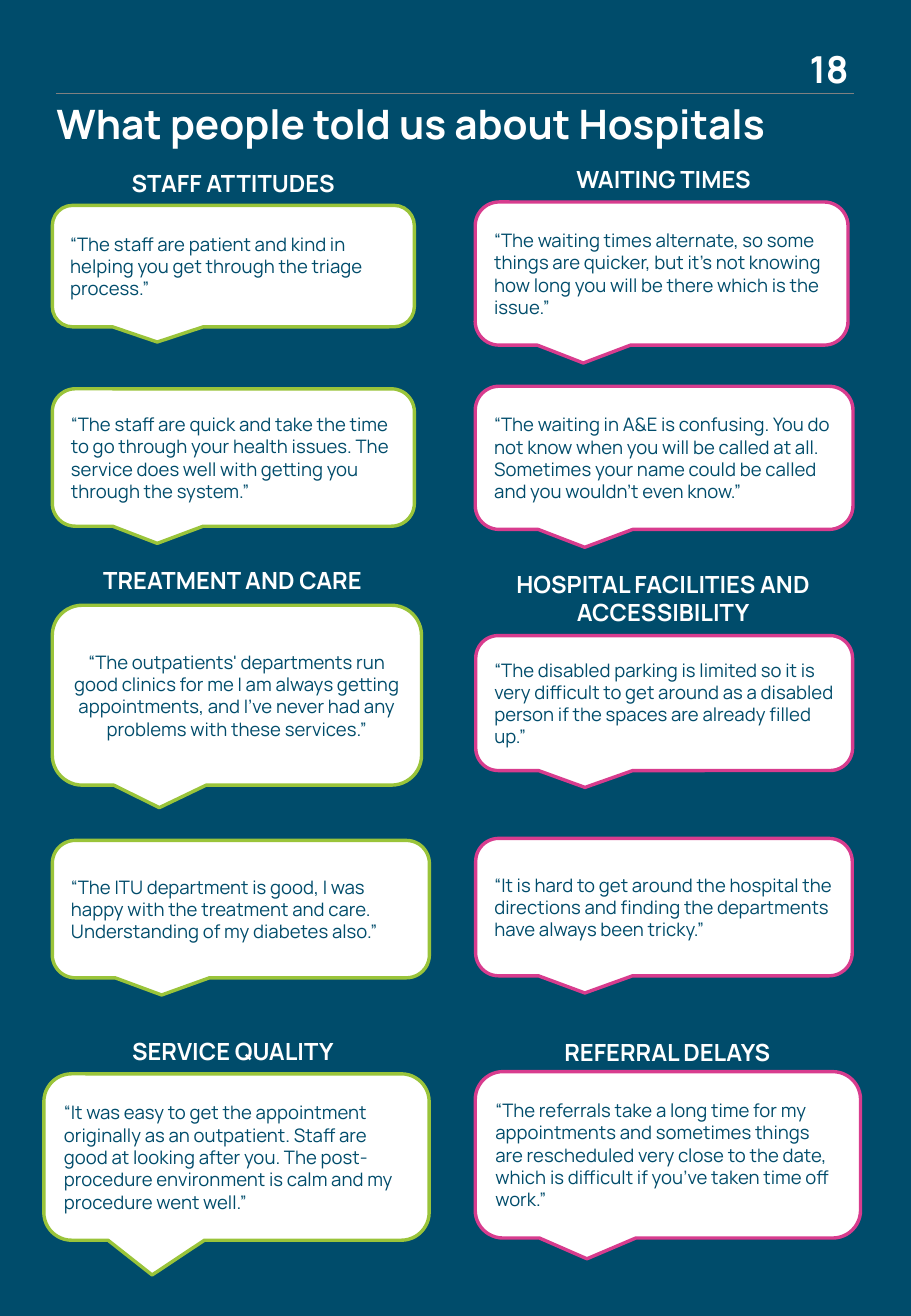
import pptx
import pptx.dml.color
import pptx.enum.shapes
import pptx.enum.text
import pptx.util
from lxml import etree

Pt = pptx.util.Pt
RGBColor = pptx.dml.color.RGBColor
PP_ALIGN = pptx.enum.text.PP_ALIGN
ANCHOR = pptx.enum.text.MSO_ANCHOR

NAVY = RGBColor(0x00, 0x4C, 0x6B)
WHITE = RGBColor(0xFF, 0xFF, 0xFF)
GREEN = RGBColor(0x9A, 0xC4, 0x3A)
PINK = RGBColor(0xD8, 0x3C, 0x8E)
GREY = RGBColor(0x80, 0x80, 0x80)
FONT = "Manrope"
SHALLOW_TAIL = (-0.21, 0.625, 0.167)
DEEP_TAIL = (-0.219, 0.709, 0.167)

# text, left, top, width, height
HEADINGS = [
    ("STAFF ATTITUDES", 31, 96.5, 214.6, 24.5),
    ("WAITING TIMES", 281.5, 94.3, 223.9, 24.5),
    ("TREATMENT AND CARE", 28.5, 331.5, 218.9, 24.5),
    ("HOSPITAL FACILITIES AND ACCESSIBILITY", 281.5, 334, 223.2, 41),
    ("SERVICE QUALITY", 24, 611, 228.2, 24.5),
    ("REFERRAL DELAYS", 281.5, 611.3, 228.2, 24.5),
]

# text, left, top, width, height, outline, alignment, tail
LEFT, CENTER = PP_ALIGN.LEFT, PP_ALIGN.CENTER
QUOTES = [
    ("“The staff are patient and kind in helping you get through the triage process.”",
     31, 121.7, 214.6, 72, GREEN, LEFT, SHALLOW_TAIL),
    ("“The staff are quick and take the time to go through your health issues. "
     "The service does well with getting you through the system.”",
     31, 230.4, 214.6, 81.4, GREEN, LEFT, SHALLOW_TAIL),
    ("“The outpatients' departments run good clinics for me I am always getting "
     "appointments, and I've never had any problems with these services.”",
     31, 358.6, 218.9, 106.6, GREEN, CENTER, SHALLOW_TAIL),
    ("“The ITU department is good, I was happy with the treatment and care. "
     "Understanding of my diabetes also.”",
     31, 498, 223.5, 81.4, GREEN, LEFT, SHALLOW_TAIL),
    ("“It was easy to get the appointment originally as an outpatient. Staff are good "
     "at looking after you. The post-procedure environment is calm and my procedure went well.”",
     26, 636.3, 228.4, 98.6, GREEN, LEFT, DEEP_TAIL),
    ("“The waiting times alternate, so some things are quicker, but it’s not knowing "
     "how long you will be there which is the issue.”",
     281.7, 119.7, 221, 84.8, PINK, LEFT, SHALLOW_TAIL),
    ("“The waiting in A&E is confusing. You do not know when you will be called at all. "
     "Sometimes your name could be called and you wouldn't even know.”",
     281.7, 228.9, 223.9, 84.8, PINK, LEFT, SHALLOW_TAIL),
    ("“The disabled parking is limited so it is very difficult to get around as a "
     "disabled person if the spaces are already filled up.”",
     282, 376.6, 223.4, 80, PINK, LEFT, SHALLOW_TAIL),
    ("“It is hard to get around the hospital the directions and finding the departments "
     "have always been tricky.”",
     282, 496.8, 223.2, 81.4, PINK, LEFT, SHALLOW_TAIL),
    ("“The referrals take a long time for my appointments and sometimes things are "
     "rescheduled very close to the date, which is difficult if you’ve taken time off work.”",
     281.7, 635, 228.4, 98.6, PINK, LEFT, SHALLOW_TAIL),
]


def write(shape, text, size, color, bold=False, align=LEFT, anchor=ANCHOR.TOP):
    frame = shape.text_frame
    frame.word_wrap = True
    frame.auto_size = pptx.enum.text.MSO_AUTO_SIZE.NONE
    frame.vertical_anchor = anchor
    para = frame.paragraphs[0]
    para.alignment = align
    span = para.add_run()
    span.text = text
    span.font.name = FONT
    span.font.size = Pt(size)
    span.font.bold = bold
    span.font.color.rgb = color


def add_title(page, text):
    title = page.shapes.title
    title.left, title.top, title.width, title.height = map(Pt, (26.2, 54.8, 457, 40))
    write(title, text, 24, WHITE, bold=True)


def add_page_number(page, number):
    box = page.shapes.add_textbox(Pt(457), Pt(27.4), Pt(46), Pt(28))
    frame = box.text_frame
    frame.margin_left = frame.margin_right = frame.margin_top = frame.margin_bottom = 0
    write(box, number, 22, WHITE, bold=True, align=PP_ALIGN.RIGHT)


def add_rule(page):
    rule = page.shapes.add_connector(
        pptx.enum.shapes.MSO_CONNECTOR.STRAIGHT, Pt(33.2), Pt(55.4), Pt(506.2), Pt(55.4))
    rule.line.color.rgb = GREY
    rule.line.width = Pt(0.75)
    etree.SubElement(rule.element.spPr, pptx.oxml.ns.qn("a:effectLst"))


def add_heading(page, text, *bounds):
    box = page.shapes.add_textbox(*map(Pt, bounds))
    write(box, text, 14, WHITE, bold=True, align=CENTER)


def add_quote(page, text, left, top, width, height, outline, align, tail):
    bubble = page.shapes.add_shape(
        pptx.enum.shapes.MSO_SHAPE.ROUNDED_RECTANGULAR_CALLOUT,
        Pt(left), Pt(top), Pt(width), Pt(height))
    for index, value in enumerate(tail):
        bubble.adjustments[index] = value
    bubble.shadow.inherit = False
    bubble.fill.solid()
    bubble.fill.fore_color.rgb = WHITE
    bubble.line.color.rgb = outline
    bubble.line.width = Pt(2)
    write(bubble, text, 11, NAVY, align=align, anchor=ANCHOR.MIDDLE)


def main():
    deck = pptx.Presentation()
    deck.slide_width, deck.slide_height = Pt(540), Pt(779.76)
    page = deck.slides.add_slide(deck.slide_layouts[5])
    page.background.fill.solid()
    page.background.fill.fore_color.rgb = NAVY
    add_rule(page)
    add_page_number(page, "18")
    add_title(page, "What people told us about Hospitals")
    for heading in HEADINGS:
        add_heading(page, *heading)
    for quote in QUOTES:
        add_quote(page, *quote)
    deck.save("out.pptx")


if __name__ == "__main__":
    main()
